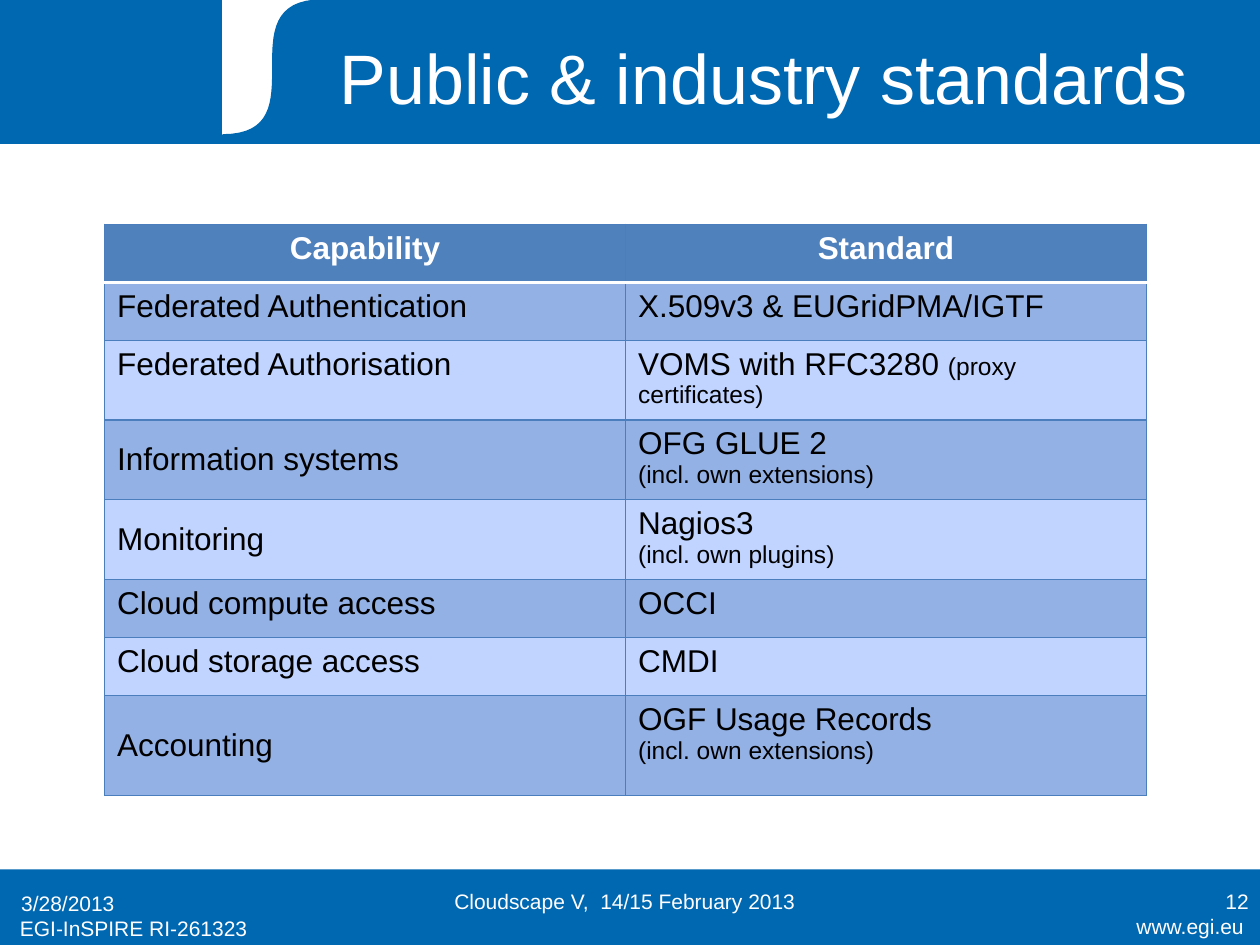
from lxml import etree
from pptx import Presentation
from pptx.dml.color import RGBColor
from pptx.enum.shapes import MSO_SHAPE
from pptx.enum.text import MSO_ANCHOR, PP_ALIGN
from pptx.oxml.ns import qn
from pptx.util import Inches, Pt

RECTANGLE = MSO_SHAPE.RECTANGLE
LEFT, CENTER, RIGHT = PP_ALIGN.LEFT, PP_ALIGN.CENTER, PP_ALIGN.RIGHT
TOP, MIDDLE = MSO_ANCHOR.TOP, MSO_ANCHOR.MIDDLE

BLUE = RGBColor(0x00, 0x67, 0xB1)
WHITE = RGBColor(0xFF, 0xFF, 0xFF)
BLACK = RGBColor(0x00, 0x00, 0x00)
HEADER_BLUE = RGBColor(0x4F, 0x81, 0xBD)
BORDER_BLUE = RGBColor(0x4B, 0x7E, 0xBC)
BAND_DARK = RGBColor(0x93, 0xB1, 0xE4)
BAND_LIGHT = RGBColor(0xC0, 0xD4, 0xFF)

HEADINGS = ("Capability", "Standard")
STANDARDS = [
    ("Federated Authentication", "X.509v3 & EUGridPMA/IGTF", ""),
    ("Federated Authorisation", "VOMS with RFC3280 ", "(proxy certificates)"),
    ("Information systems", "OFG GLUE 2", "(incl. own extensions)"),
    ("Monitoring", "Nagios3", "(incl. own plugins)"),
    ("Cloud compute access", "OCCI", ""),
    ("Cloud storage access", "CMDI", ""),
    ("Accounting", "OGF Usage Records", "(incl. own extensions)"),
]
FOOTERS = [
    ("www.egi.eu", (8.39, 7.2, 1.58, 0.31), RIGHT, TOP),
    ("EGI-InSPIRE RI-261323", (0.06, 7.22, 2.5, 0.31), LEFT, TOP),
    ("3/28/2013", (0.07, 6.97, 2.33, 0.4), LEFT, MIDDLE),
    ("Cloudscape V,  14/15 February 2013", (3.19, 6.95, 3.54, 0.4), CENTER, MIDDLE),
    ("12", (7.68, 6.95, 2.33, 0.4), RIGHT, MIDDLE),
]


def write(paragraph, text, size=18, color=BLACK, bold=False, align=LEFT):
    """Add a formatted run to a paragraph."""
    paragraph.alignment = align
    run = paragraph.add_run()
    run.text = text
    run.font.name = "Arial"
    run.font.size = Pt(size)
    run.font.bold = bold
    run.font.color.rgb = color


def paint(shape, fill, outlined=True):
    """Give a shape a flat fill, with an outline of the same colour or none."""
    shape.shadow.inherit = False
    shape.fill.solid()
    shape.fill.fore_color.rgb = fill
    if outlined:
        shape.line.color.rgb = fill
        shape.line.width = Pt(0.75)
    else:
        shape.line.fill.background()


def add_band(slide, box, fill, outlined=True):
    """Draw a plain rectangle."""
    band = slide.shapes.add_shape(RECTANGLE, *map(Inches, box))
    paint(band, fill, outlined)


def add_swoosh(slide, left, top, right, bottom, bend, steps=32):
    """Draw the blue panel whose left edge is an S-shaped curve."""
    curve = []
    for step in range(1, steps + 1):
        t = step / steps
        weights = ((1 - t) ** 3, 3 * t * (1 - t) ** 2, 3 * t**2 * (1 - t), t**3)
        x = sum(w * v for w, v in zip(weights, (left, bend, left, bend)))
        y = sum(w * v for w, v in zip(weights, (bottom, bottom, top, top)))
        curve.append((Inches(x), Inches(y)))
    builder = slide.shapes.build_freeform(Inches(right), Inches(top))
    corners = [(Inches(x), Inches(bottom)) for x in (right, left)]
    builder.add_line_segments(corners + curve, close=True)
    paint(builder.convert_to_shape(), BLUE)


def add_title(slide, text, box):
    """Fill the title placeholder and bring it in front of the banner."""
    title = slide.shapes.title
    title.left, title.top, title.width, title.height = map(Inches, box)
    title.text_frame.vertical_anchor = MIDDLE
    write(title.text_frame.paragraphs[0], text, size=40, color=WHITE, align=CENTER)
    slide.shapes._spTree.append(title._element)


def add_footer(slide, text, box, align, anchor):
    """Add one white footer text."""
    frame = slide.shapes.add_textbox(*map(Inches, box)).text_frame
    frame.word_wrap = True
    frame.vertical_anchor = anchor
    write(frame.paragraphs[0], text, size=12, color=WHITE, align=align)


def add_border(cell, side, color, width):
    """Add a solid line to one side of a cell."""
    properties = cell._tc.get_or_add_tcPr()
    line = etree.SubElement(properties, qn(f"a:ln{side}"), w=str(Pt(width)))
    fill = etree.SubElement(line, qn("a:solidFill"))
    etree.SubElement(fill, qn("a:srgbClr"), val=str(color))


def style_cell(cell, row, fill):
    """Set the borders and the fill of a cell; the header rule is white."""
    rule_sides = {0: "B", 1: "T"}
    for side in "LRTB":
        if rule_sides.get(row) == side:
            add_border(cell, side, WHITE, 2)
        else:
            add_border(cell, side, BORDER_BLUE, 0.75)
    cell.fill.solid()
    cell.fill.fore_color.rgb = fill


def add_standards_table(slide, left, top, width):
    """Build the table of capabilities and their standards."""
    heights = [0.46, 0.46, 0.6, 0.6, 0.6, 0.46, 0.46, 0.79]
    table = slide.shapes.add_table(
        len(heights), len(HEADINGS), Inches(left), Inches(top),
        Inches(width), Inches(sum(heights)),
    ).table
    for row, height in enumerate(heights):
        table.rows[row].height = Inches(height)
        fill = HEADER_BLUE if row == 0 else BAND_DARK if row % 2 else BAND_LIGHT
        for cell in table.rows[row].cells:
            style_cell(cell, row, fill)
    for column, heading in enumerate(HEADINGS):
        paragraph = table.cell(0, column).text_frame.paragraphs[0]
        write(paragraph, heading, color=WHITE, bold=True, align=CENTER)
    for row, (capability, standard, note) in enumerate(STANDARDS, start=1):
        capability_cell, standard_cell = table.rows[row].cells
        write(capability_cell.text_frame.paragraphs[0], capability)
        paragraph = standard_cell.text_frame.paragraphs[0]
        write(paragraph, standard)
        if note:
            if not standard.endswith(" "):
                capability_cell.vertical_anchor = MIDDLE
                paragraph = standard_cell.text_frame.add_paragraph()
            write(paragraph, note, size=14)


def main():
    """Build and save the slide."""
    deck = Presentation()
    deck.slide_width, deck.slide_height = Inches(10), Inches(7.5)
    slide = deck.slides.add_slide(deck.slide_layouts[5])
    add_band(slide, (0, 6.9, 10, 0.6), BLUE, outlined=False)
    add_band(slide, (0, 0, 10, 1.14), BLUE)
    add_band(slide, (1.77, 0, 1.97, 1.07), WHITE)
    add_swoosh(slide, left=1.77, top=0, right=3.74, bottom=1.07, bend=2.56)
    add_title(slide, "Public & industry standards", (2.32, 0.13, 7.48, 0.95))
    for footer in FOOTERS:
        add_footer(slide, *footer)
    add_standards_table(slide, left=0.83, top=1.78, width=8.27)
    deck.save("out.pptx")


if __name__ == "__main__":
    main()
